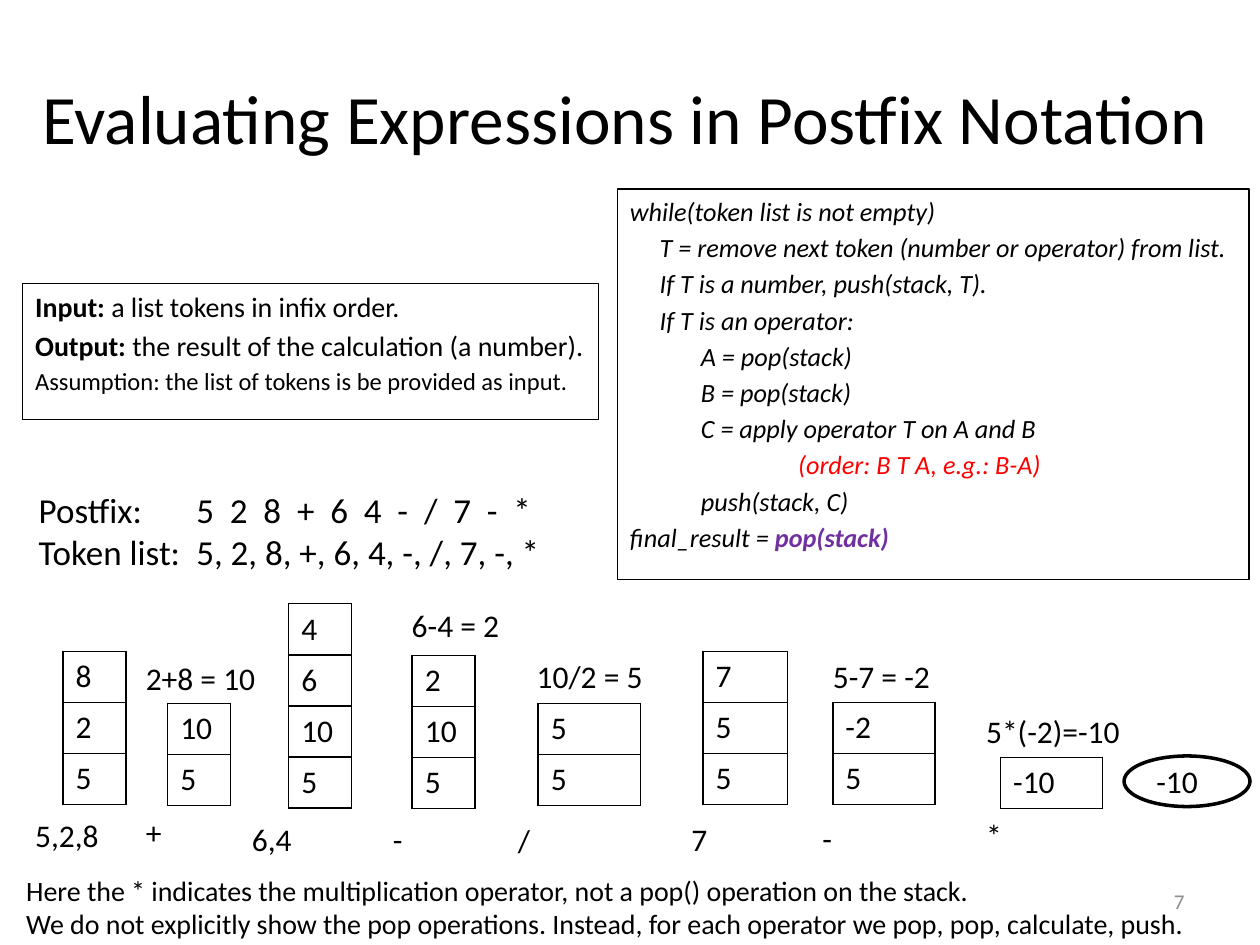
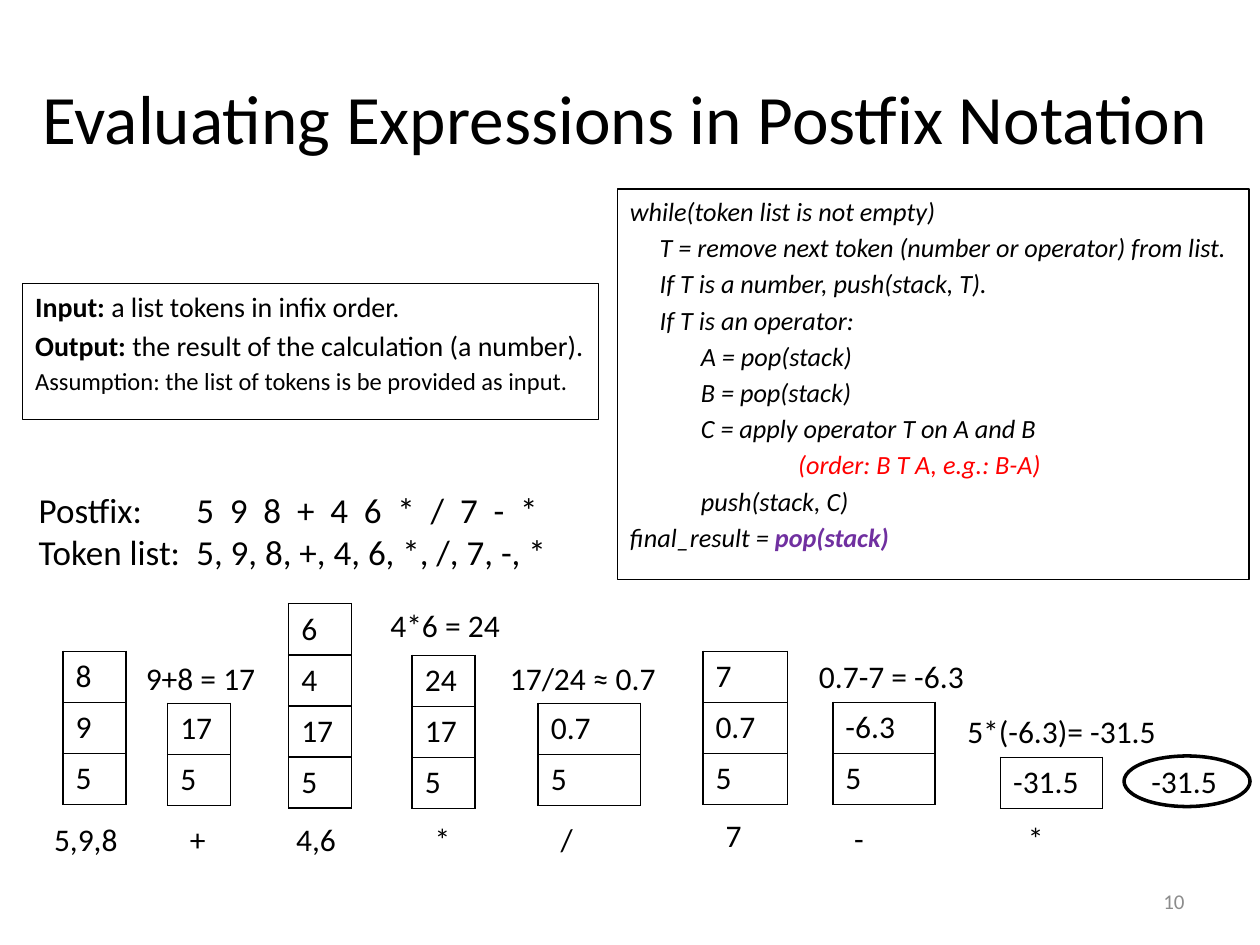
from dataclasses import dataclass

from lxml import etree
from pptx import Presentation
from pptx import util as u
from pptx.dml.color import RGBColor
from pptx.enum import shapes, text
from pptx.oxml import ns

BLACK = RGBColor(0x00, 0x00, 0x00)
RED = RGBColor(0xFF, 0x00, 0x00)
PURPLE = RGBColor(0x70, 0x30, 0xA0)
GRAY = RGBColor(0x8C, 0x8C, 0x8C)
FONT = "Calibri"
TITLE = "Evaluating Expressions in Postfix Notation"
ROW = 1.03
LINE = 1.02


@dataclass(frozen=True)
class Box:
    left: float
    top: float
    width: float
    height: float

    def lengths(self) -> list:
        return [u.Cm(n) for n in (self.left, self.top, self.width, self.height)]


@dataclass(frozen=True)
class Line:
    head: str
    tail: str = ""
    size: float = 15
    indent: float = 0
    color: RGBColor = BLACK


@dataclass(frozen=True)
class Stack:
    left: float
    width: float
    base: float


@dataclass(frozen=True)
class Label:
    text: str
    left: float
    top: float
    width: float


@dataclass(frozen=True)
class Page:
    number: int
    tokens: str
    stacks: list
    inputs: list
    sums: list
    notes: str = ""


CODE = [
    Line("while(token list is not empty)"),
    Line("T = remove next token (number or operator) from list.", indent=0.6),
    Line("If T is a number, push(stack, T).", indent=0.6),
    Line("If T is an operator:", indent=0.6),
    Line("A = pop(stack)", indent=1.43),
    Line("B = pop(stack)", indent=1.43),
    Line("C = apply operator T on A and B", indent=1.43),
    Line("(order: B T A, e.g.: B-A)", indent=3.39, color=RED),
    Line("push(stack, C)", indent=1.43),
    Line("final_result = ", "pop(stack)"),
]
GOAL = [
    Line("Input:", " a list tokens in infix order.", 16),
    Line("Output:", " the result of the calculation (a number).", 16),
    Line("Assumption: the list of tokens is be provided as input.", size=14),
]
STACKS = [
    Stack(1.27, 1.27, 16.22),
    Stack(3.38, 1.27, 16.24),
    Stack(5.82, 1.27, 16.29),
    Stack(8.31, 1.27, 16.3),
    Stack(10.85, 2.06, 16.24),
    Stack(14.17, 1.7, 16.22),
    Stack(16.79, 2.06, 16.22),
    Stack(20.17, 2.06, 16.3),
]
PAGES = [
    Page(
        7, "5 2 8 + 6 4 - / 7 - *",
        ["8 2 5", "10 5", "4 6 10 5", "2 10 5", "5 5", "7 5 5", "-2 5", "-10"],
        [
            Label("5,2,8", 0.46, 16.33, 1.8),
            Label("+", 2.69, 16.26, 0.84),
            Label("6,4", 4.83, 16.41, 1.32),
            Label("-", 7.67, 16.41, 0.71),
            Label("/", 10.19, 16.43, 0.76),
            Label("7", 13.69, 16.41, 0.84),
            Label("-", 16.33, 16.38, 0.71),
            Label("*", 19.63, 16.33, 0.84),
        ],
        [
            Label("2+8 = 10", 2.69, 13.16, 2.74),
            Label("6-4 = 2", 8.05, 12.09, 2.29),
            Label("10/2 = 5", 10.57, 13.13, 2.67),
            Label("5-7 = -2", 16.54, 13.13, 2.49),
            Label("5*(-2)=-10", 19.63, 14.22, 3.23),
            Label("-10", 23.06, 15.24, 1.37),
        ],
        "Here the * indicates the multiplication operator, "
        "not a pop() operation on the stack.\n"
        "We do not explicitly show the pop operations. Instead, "
        "for each operator we pop, pop, calculate, push.",
    ),
    Page(
        10, "5 9 8 + 4 6 * / 7 - *",
        ["8 9 5", "17 5", "6 4 17 5", "24 17 5", "0.7 5", "7 0.7 5",
         "-6.3 5", "-31.5"],
        [
            Label("5,9,8", 0.84, 16.41, 1.8),
            Label("+", 3.58, 16.41, 0.84),
            Label("4,6", 5.72, 16.41, 1.32),
            Label("*", 8.51, 16.41, 0.84),
            Label("/", 11.05, 16.41, 0.76),
            Label("7", 14.38, 16.33, 0.84),
            Label("-", 16.97, 16.38, 0.71),
            Label("*", 20.47, 16.38, 0.84),
        ],
        [
            Label("9+8 = 17", 2.69, 13.16, 2.74),
            Label("4*6 = 24", 7.62, 12.09, 2.74),
            Label("17/24 ≈ 0.7", 10.03, 13.16, 3.48),
            Label("0.7-7 = -6.3", 16.26, 13.13, 3.45),
            Label("5*(-6.3)= -31.5", 19.25, 14.22, 4.34),
            Label("-31.5", 22.96, 15.24, 1.85),
        ],
    ),
]


def style(frame, size: float, color: RGBColor = BLACK, align=None) -> None:
    for para in frame.paragraphs:
        para.alignment = align
        for run in para.runs:
            font = run.font
            font.name, font.size, font.color.rgb = FONT, u.Pt(size), color


def write(slide, box: Box, words: str, size: float, color: RGBColor = BLACK,
          align=None, wrap: bool = True, middle: bool = False):
    frame = slide.shapes.add_textbox(*box.lengths()).text_frame
    frame.text = words
    frame.word_wrap = wrap
    if not wrap:
        frame.auto_size = text.MSO_AUTO_SIZE.SHAPE_TO_FIT_TEXT
    if middle:
        frame.vertical_anchor = text.MSO_ANCHOR.MIDDLE
    style(frame, size, color, align)
    return frame


def outline(slide, kind, box: Box, weight: float):
    shape = slide.shapes.add_shape(kind, *box.lengths())
    shape.shadow.inherit = False
    shape.fill.background()
    shape.line.color.rgb = BLACK
    shape.line.width = u.Pt(weight)
    return shape


def panel(slide, box: Box, lines: list, italic: bool) -> None:
    frame = outline(slide, shapes.MSO_SHAPE.RECTANGLE, box, 0.75).text_frame
    frame.word_wrap = True
    frame.vertical_anchor = text.MSO_ANCHOR.TOP
    frame.text = "\n".join(line.head for line in lines)
    for para, line in zip(frame.paragraphs, lines):
        para.alignment = text.PP_ALIGN.LEFT
        para.space_before = u.Pt(2.7)
        para._p.get_or_add_pPr().set("marL", str(u.Cm(line.indent)))
        if line.tail:
            para.add_run().text = line.tail
        for run in para.runs:
            font = run.font
            font.name, font.size, font.italic = FONT, u.Pt(line.size), italic
            font.color.rgb = line.color
        if line.tail:
            strong = para.runs[1 if italic else 0].font
            strong.bold = True
            strong.color.rgb = PURPLE if italic else BLACK


def border(cell) -> None:
    props = cell._tc.get_or_add_tcPr()
    for side in ("lnL", "lnR", "lnT", "lnB"):
        edge = etree.SubElement(props, ns.qn("a:" + side), w=str(u.Pt(1)))
        solid = etree.SubElement(edge, ns.qn("a:solidFill"))
        etree.SubElement(solid, ns.qn("a:srgbClr"), val=str(BLACK))


def pile(slide, stack: Stack, values: list) -> None:
    tall = ROW * len(values)
    box = Box(stack.left, stack.base - tall, stack.width, tall)
    table = slide.shapes.add_table(len(values), 1, *box.lengths()).table
    table.first_row = table.horz_banding = False
    for row, value in enumerate(values):
        table.rows[row].height = u.Cm(ROW)
        cell = table.cell(row, 0)
        cell.text = value
        border(cell)
        cell.fill.background()
        style(cell.text_frame, 18)


def listing(slide, tokens: list) -> None:
    words = "Postfix:\t" + "  ".join(tokens) + "\nToken list:\t" + ", ".join(tokens)
    frame = write(slide, Box(0.53, 9.73, 11.35, 1.96), words, 20)
    for para in frame.paragraphs:
        tabs = etree.SubElement(para._p.get_or_add_pPr(), ns.qn("a:tabLst"))
        etree.SubElement(tabs, ns.qn("a:tab"), pos=str(u.Cm(3.18)), algn="l")


def draw(slide, page: Page) -> None:
    write(slide, Box(0.43, 0.76, 24.33, 3.18), TITLE, 39.6,
          align=text.PP_ALIGN.CENTER, middle=True)
    listing(slide, page.tokens.split())
    for stack, values in zip(STACKS, page.stacks):
        pile(slide, stack, values.split())
    for label in page.inputs + page.sums:
        box = Box(label.left, label.top, label.width, LINE)
        write(slide, box, label.text, 18, wrap=False)
    outline(slide, shapes.MSO_SHAPE.OVAL, Box(22.66, 15.24, 2.54, LINE), 2)
    write(slide, Box(18.21, 17.65, 5.92, LINE), str(page.number), 12, GRAY,
          align=text.PP_ALIGN.RIGHT, middle=True)
    panel(slide, Box(12.45, 3.81, 12.73, 7.87), CODE, True)
    panel(slide, Box(0.46, 5.72, 11.61, 2.74), GOAL, False)
    if page.notes:
        write(slide, Box(0.28, 17.48, 24.03, 1.63), page.notes, 16, wrap=False)


def main() -> None:
    deck = Presentation()
    deck.slide_width, deck.slide_height = u.Cm(25.4), u.Cm(19.05)
    for page in PAGES:
        draw(deck.slides.add_slide(deck.slide_layouts[6]), page)
    deck.save("out.pptx")


if __name__ == "__main__":
    main()
